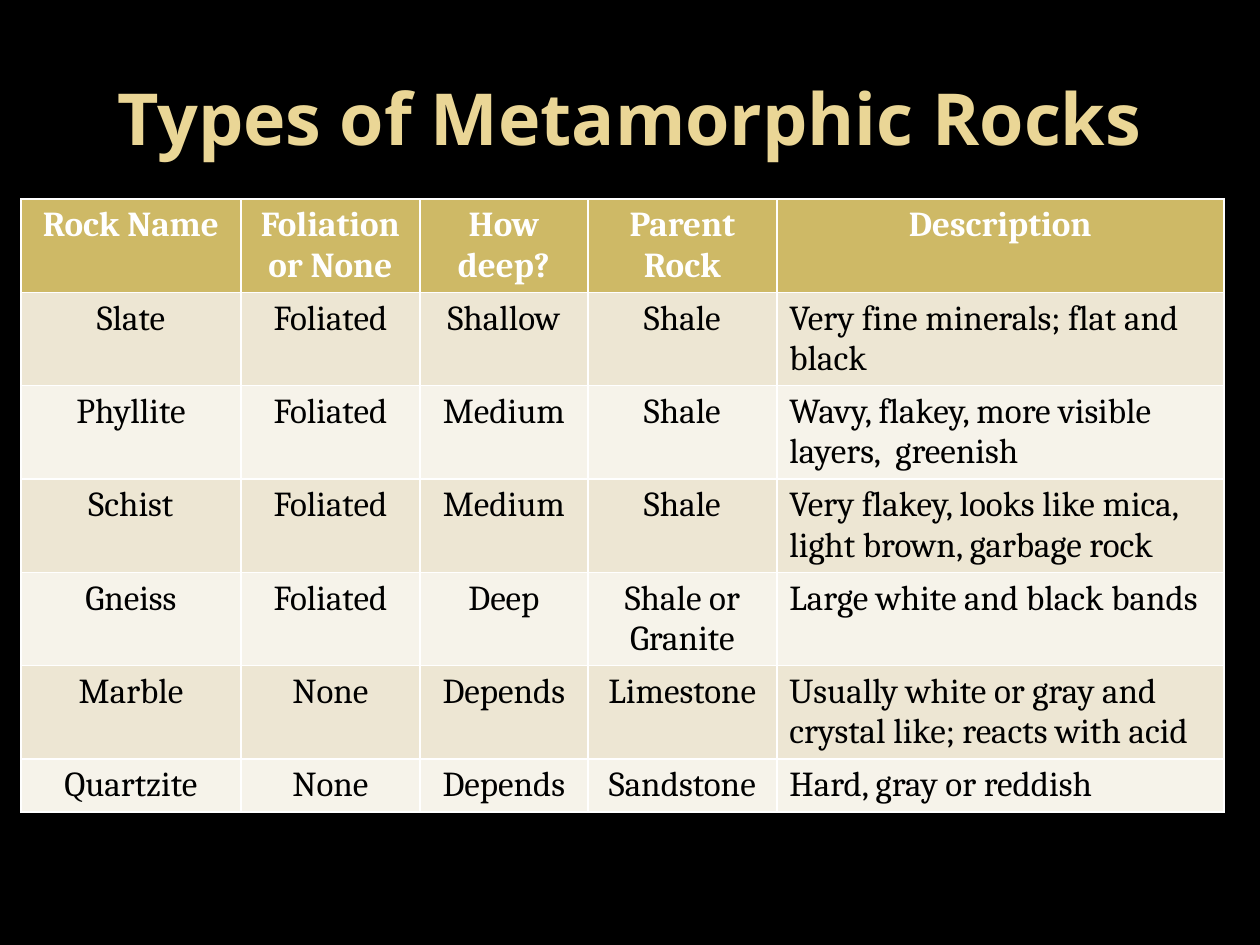
from pptx import Presentation
from pptx.dml.color import RGBColor
from pptx.enum.text import MSO_ANCHOR, PP_ALIGN
from pptx.util import Inches, Pt

TITLE = "Types of Metamorphic Rocks"
HEADS = ("Rock Name", "Foliation or None", "How deep?", "Parent Rock", "Description")
ROCKS = [
    ("Slate", "Foliated", "Shallow", "Shale", "Very fine minerals; flat and black"),
    ("Phyllite", "Foliated", "Medium", "Shale",
     "Wavy, flakey, more visible layers,  greenish"),
    ("Schist", "Foliated", "Medium", "Shale",
     "Very flakey, looks like mica, light brown, garbage rock"),
    ("Gneiss", "Foliated", "Deep", "Shale or Granite", "Large white and black bands"),
    ("Marble", "None", "Depends", "Limestone",
     "Usually white or gray and crystal like; reacts with acid"),
    ("Quartzite", "None", "Depends", "Sandstone", "Hard, gray or reddish"),
]

PX = Inches(1) // 126
WIDTHS = (220, 179, 168, 189, 447)
ROW = 52

BLACK = RGBColor(0x00, 0x00, 0x00)
WHITE = RGBColor(0xFF, 0xFF, 0xFF)
SAND = RGBColor(0xEA, 0xD6, 0x96)
GOLD = RGBColor(0xCE, 0xB9, 0x66)
BANDS = (RGBColor(0xF6, 0xF3, 0xEA), RGBColor(0xED, 0xE6, 0xD3))
LEFT, CENTER = PP_ALIGN.LEFT, PP_ALIGN.CENTER
MIDDLE = MSO_ANCHOR.MIDDLE


def place(*box):
    return [n * PX for n in box]


def write(frame, text, face, size, color, bold, align):
    par = frame.paragraphs[0]
    par.alignment = align
    run = par.add_run()
    run.text = text
    font = run.font
    font.name, font.size, font.bold = face, Pt(size), bold
    font.color.rgb = color


def add_title(slide):
    title = slide.shapes.title
    title.left, title.top, title.width, title.height = place(63, 38, 1134, 157)
    title.text_frame.vertical_anchor = MIDDLE
    write(title.text_frame, TITLE, "Open Sans", 41, SAND, True, CENTER)


def add_rocks(slide):
    rows = [HEADS, *ROCKS]
    box = place(21, 199, sum(WIDTHS), ROW * len(rows))
    table = slide.shapes.add_table(len(rows), len(HEADS), *box).table
    for col, width in zip(table.columns, WIDTHS):
        col.width = width * PX
    for r, row in enumerate(rows):
        head = r == 0
        for c, text in enumerate(row):
            cell = table.cell(r, c)
            cell.fill.solid()
            cell.fill.fore_color.rgb = GOLD if head else BANDS[r % 2]
            last = c == len(HEADS) - 1
            write(cell.text_frame, text, "Cambria", 20, WHITE if head else BLACK,
                  head, LEFT if last and not head else CENTER)


def main():
    deck = Presentation()
    deck.slide_width, deck.slide_height = place(1260, 945)
    slide = deck.slides.add_slide(deck.slide_layouts[5])
    slide.background.fill.solid()
    slide.background.fill.fore_color.rgb = BLACK
    add_title(slide)
    add_rocks(slide)
    deck.save("out.pptx")


if __name__ == "__main__":
    main()
